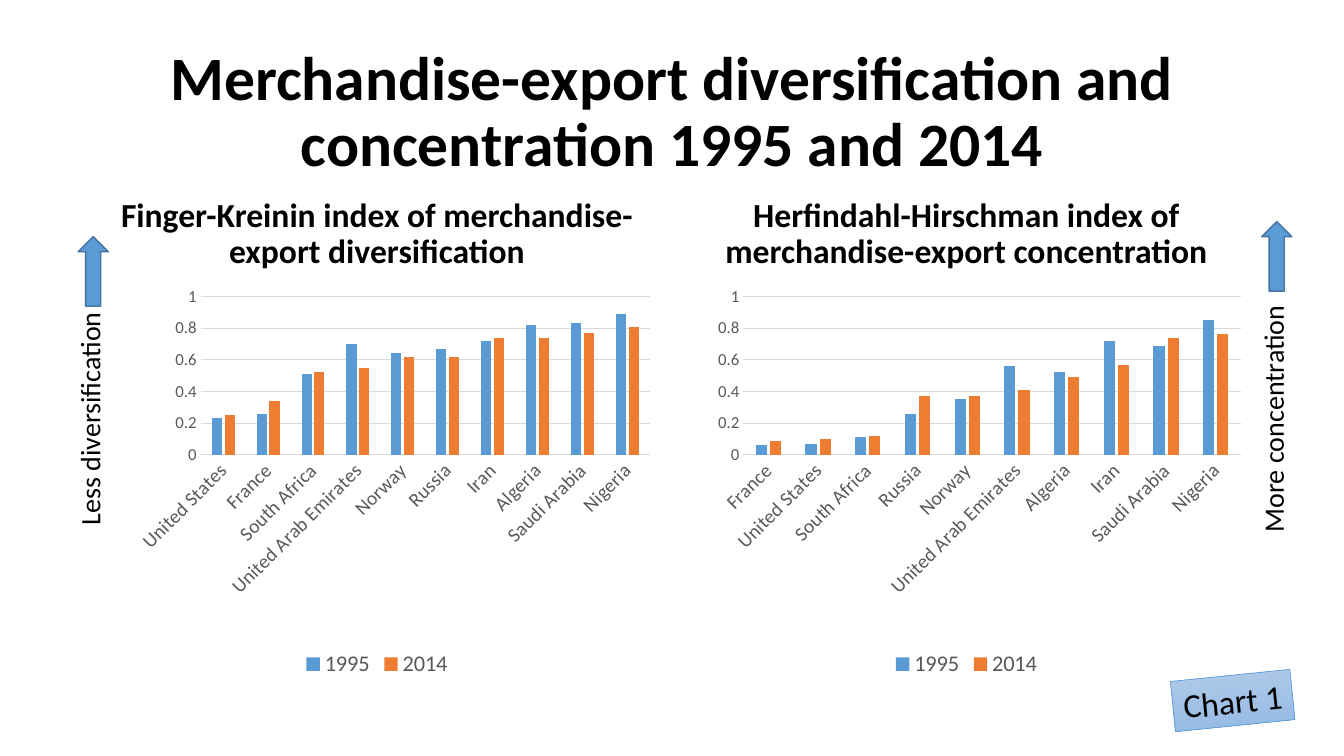
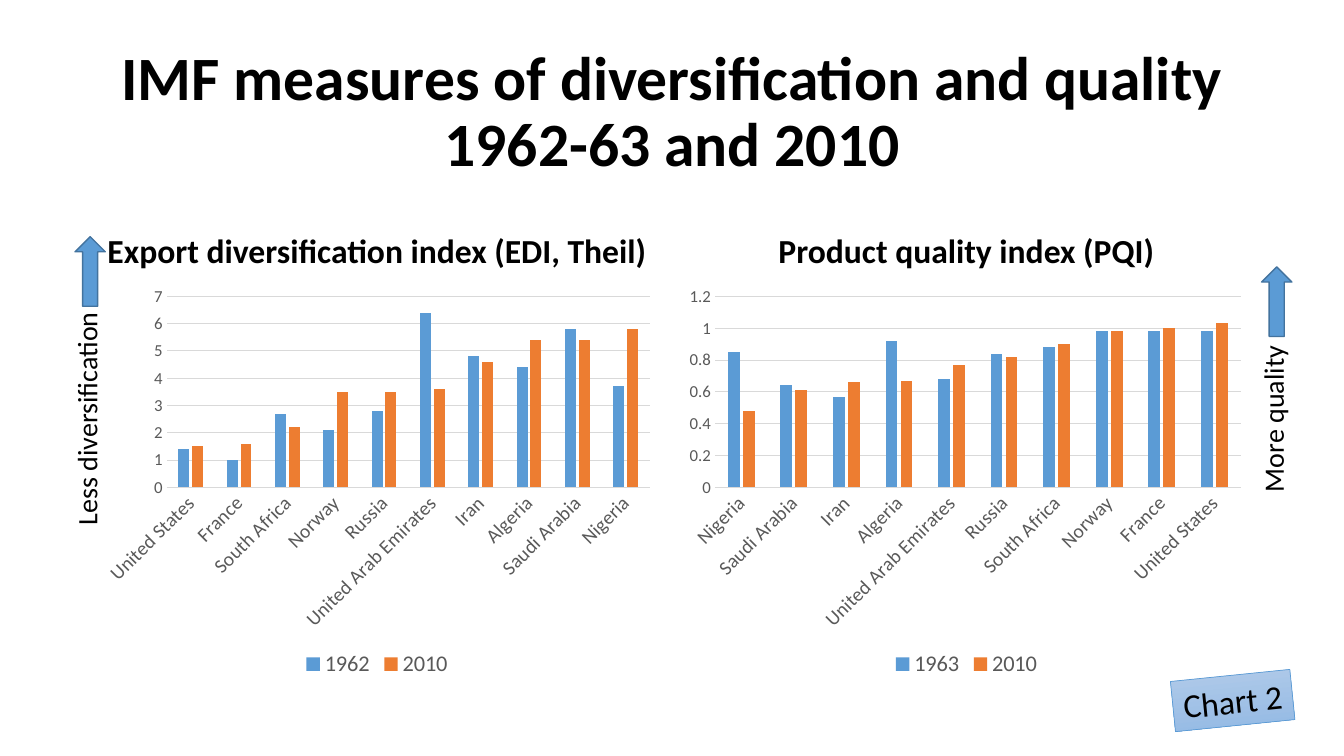
from lxml import etree
from pptx import Presentation
from pptx.chart.data import CategoryChartData
from pptx.dml.color import RGBColor
from pptx.enum.chart import XL_CHART_TYPE, XL_LEGEND_POSITION, XL_TICK_MARK
from pptx.enum.shapes import MSO_SHAPE
from pptx.enum.text import MSO_ANCHOR, MSO_AUTO_SIZE, PP_ALIGN
from pptx.oxml.ns import qn
from pptx.util import Inches, Pt

COLUMNS = XL_CHART_TYPE.COLUMN_CLUSTERED
LEGEND_BOTTOM = XL_LEGEND_POSITION.BOTTOM
NO_TICK = XL_TICK_MARK.NONE
UP_ARROW = MSO_SHAPE.UP_ARROW
RECTANGLE = MSO_SHAPE.RECTANGLE
MIDDLE, BOTTOM = MSO_ANCHOR.MIDDLE, MSO_ANCHOR.BOTTOM
NO_AUTOFIT = MSO_AUTO_SIZE.NONE
CENTER = PP_ALIGN.CENTER

FONT = "Calibri"
COLORS = {
    "text": "000000",
    "axis": "595959",
    "grid": "D9D9D9",
    "first": "5B9BD5",
    "second": "ED7D31",
    "arrow_line": "43739E",
    "tag_top": "B1CBE9",
    "tag_bottom": "93B9E4",
}

# All boxes are left, top, width, height in percent of the slide
TITLE = (6.9, 5.33, 86.27, 19.33)
TAG = (87.25, 89.33, 8.93, 6.67)
HALVES = ((6.9, 42.3), (50.64, 42.53))
HEADING_ROWS = (24.53, 12)
CHART_ROWS = (36.53, 53.73)
ARROW_SIZE = (2.25, 9.2)
LABEL_SIZE = (18.5, 5.87)
LABEL_MIDDLE = 55.4

# Plot edges as shares of the chart
PLOT_TOP, PLOT_RIGHT = 0.05, 0.98

SLIDES = [
    {
        "title": "Merchandise-export diversification and concentration 1995 and 2014",
        "tag": "Chart 1",
        "plot_height": 0.39,
        "panels": [
            {
                "heading": "Finger-Kreinin index of merchandise-export diversification",
                "label": "Less diversification",
                "arrow": (6.94, 40.5),
                "plot_left": 0.19,
                "scale": (1, 0.2),
                "countries": ["United States", "France", "South Africa",
                              "United Arab Emirates", "Norway", "Russia", "Iran",
                              "Algeria", "Saudi Arabia", "Nigeria"],
                "series": {
                    "1995": [0.23, 0.26, 0.51, 0.7, 0.64, 0.67, 0.72, 0.82, 0.83, 0.89],
                    "2014": [0.25, 0.34, 0.52, 0.55, 0.62, 0.62, 0.74, 0.74, 0.77, 0.81],
                },
            },
            {
                "heading": "Herfindahl-Hirschman index of merchandise-export concentration",
                "label": "More concentration",
                "arrow": (95, 38.5),
                "plot_left": 0.11,
                "scale": (1, 0.2),
                "countries": ["France", "United States", "South Africa", "Russia",
                              "Norway", "United Arab Emirates", "Algeria", "Iran",
                              "Saudi Arabia", "Nigeria"],
                "series": {
                    "1995": [0.06, 0.07, 0.11, 0.26, 0.35, 0.56, 0.52, 0.72, 0.69, 0.85],
                    "2014": [0.09, 0.1, 0.12, 0.37, 0.37, 0.41, 0.49, 0.57, 0.74, 0.76],
                },
            },
        ],
    },
    {
        "title": "IMF measures of diversification and quality 1962-63 and 2010",
        "tag": "Chart 2",
        "plot_height": 0.47,
        "panels": [
            {
                "heading": "Export diversification index (EDI, Theil)",
                "label": "Less diversification",
                "arrow": (6.71, 40.5),
                "plot_left": 0.13,
                "scale": (7, 1),
                "countries": ["United States", "France", "South Africa", "Norway",
                              "Russia", "United Arab Emirates", "Iran", "Algeria",
                              "Saudi Arabia", "Nigeria"],
                "series": {
                    "1962": [1.4, 1, 2.7, 2.1, 2.8, 6.4, 4.8, 4.4, 5.8, 3.7],
                    "2010": [1.5, 1.6, 2.2, 3.5, 3.5, 3.6, 4.6, 5.4, 5.4, 5.8],
                },
            },
            {
                "heading": "Product quality index (PQI)",
                "label": "More quality",
                "arrow": (95, 44.5),
                "plot_left": 0.06,
                "scale": (1.2, 0.2),
                "countries": ["Nigeria", "Saudi Arabia", "Iran", "Algeria",
                              "United Arab Emirates", "Russia", "South Africa",
                              "Norway", "France", "United States"],
                "series": {
                    "1963": [0.85, 0.64, 0.57, 0.92, 0.68, 0.84, 0.88, 0.98, 0.98, 0.98],
                    "2010": [0.48, 0.61, 0.66, 0.67, 0.77, 0.82, 0.9, 0.98, 1, 1.03],
                },
            },
        ],
    },
]


def color(name):
    return RGBColor.from_string(COLORS[name])


class Deck:
    """Holds the style and the current slide."""

    def __init__(self):
        self.presentation = Presentation()
        self.presentation.slide_width = Inches(13.33)
        self.presentation.slide_height = Inches(7.5)
        self.slide = None

    def box(self, left, top, width, height):
        across = self.presentation.slide_width / 100
        down = self.presentation.slide_height / 100
        return (int(left * across), int(top * down),
                int(width * across), int(height * down))

    def font(self, font, size, name="text", bold=False):
        font.name, font.size, font.bold = FONT, Pt(size), bold
        font.color.rgb = color(name)

    def set_text(self, shape, text, size, bold=False, anchor=MIDDLE, wrap=True):
        frame = shape.text_frame
        frame.text = text
        frame.auto_size = NO_AUTOFIT
        frame.word_wrap = wrap
        frame.vertical_anchor = anchor
        paragraph = frame.paragraphs[0]
        paragraph.alignment = CENTER
        paragraph.line_spacing = 0.9 if wrap else 1.0
        self.font(paragraph.runs[0].font, size, bold=bold)

    def add_slide(self, title):
        layout = self.presentation.slide_layouts.get_by_name("Title Only")
        self.slide = self.presentation.slides.add_slide(layout)
        shape = self.slide.shapes.title
        shape.left, shape.top, shape.width, shape.height = self.box(*TITLE)
        self.set_text(shape, title, 44, bold=True)

    def heading(self, left, width, text):
        top, height = HEADING_ROWS
        shape = self.slide.shapes.add_textbox(*self.box(left, top, width, height))
        self.set_text(shape, text, 24, bold=True, anchor=BOTTOM)

    def shape(self, kind, box, line, line_width):
        shape = self.slide.shapes.add_shape(kind, *self.box(*box))
        shape.shadow.inherit = False
        shape.line.color.rgb = color(line)
        shape.line.width = Pt(line_width)
        return shape

    def direction(self, center, arrow_bottom, text):
        """Upright label with an arrow above it."""
        width, height = LABEL_SIZE
        label = self.slide.shapes.add_textbox(*self.box(
            center - 0.3 - width / 2, LABEL_MIDDLE - height / 2, width, height))
        label.rotation = 270
        self.set_text(label, text, 20, wrap=False)
        width, height = ARROW_SIZE
        arrow = self.shape(UP_ARROW, (center - width / 2, arrow_bottom - height,
                                      width, height), "arrow_line", 1)
        arrow.fill.solid()
        arrow.fill.fore_color.rgb = color("first")

    def tag(self, text):
        shape = self.shape(RECTANGLE, TAG, "first", 0.5)
        shape.rotation = 354.2
        shape.fill.gradient()
        shape.fill.gradient_angle = 270
        for stop, name in zip(shape.fill.gradient_stops, ("tag_top", "tag_bottom")):
            stop.color.rgb = color(name)
        self.set_text(shape, text, 24, wrap=False)

    def chart(self, left, width, panel, plot_height):
        data = CategoryChartData()
        data.categories = panel["countries"]
        for name, values in panel["series"].items():
            data.add_series(name, values)
        top, height = CHART_ROWS
        chart = self.slide.shapes.add_chart(
            COLUMNS, *self.box(left, top, width, height), data).chart
        self.font(chart.font, 10)
        chart.has_title = False
        chart.has_legend = True
        chart.legend.position = LEGEND_BOTTOM
        chart.legend.include_in_layout = False
        self.font(chart.legend.font, 16, "axis")

        # Columns
        plot = chart.plots[0]
        plot.gap_width, plot.overlap = 219, -27
        plot.vary_by_categories = False
        for series, name in zip(plot.series, ("first", "second")):
            series.format.fill.solid()
            series.format.fill.fore_color.rgb = color(name)

        # Axes
        countries, values = chart.category_axis, chart.value_axis
        for axis, size in ((countries, 14), (values, 12)):
            axis.major_tick_mark = axis.minor_tick_mark = NO_TICK
            self.font(axis.tick_labels.font, size, "axis")
        values.minimum_scale = 0
        values.maximum_scale, values.major_unit = panel["scale"]
        values.tick_labels.number_format = "General"
        values.tick_labels.number_format_is_linked = False
        values.format.line.fill.background()
        for line in (countries.format.line, values.major_gridlines.format.line):
            line.color.rgb = color("grid")
            line.width = Pt(0.75)
        self.slant_labels(countries)
        self.place_plot(chart, panel["plot_left"], plot_height)

    def slant_labels(self, axis):
        body = axis._element.find(qn("c:txPr")).find(qn("a:bodyPr"))
        body.set("rot", "-2700000")
        body.set("vert", "horz")

    def place_plot(self, chart, left, height):
        area = chart._chartSpace.find(qn("c:chart")).find(qn("c:plotArea"))
        for layout in area.findall(qn("c:layout")):
            area.remove(layout)
        layout = etree.Element(qn("c:layout"))
        area.insert(0, layout)
        manual = etree.SubElement(layout, qn("c:manualLayout"))
        settings = {"layoutTarget": "inner", "xMode": "edge", "yMode": "edge",
                    "x": left, "y": PLOT_TOP,
                    "w": round(PLOT_RIGHT - left, 2), "h": height}
        for name, value in settings.items():
            etree.SubElement(manual, qn("c:" + name)).set("val", str(value))


def main():
    deck = Deck()
    for content in SLIDES:
        deck.add_slide(content["title"])
        for (left, width), panel in zip(HALVES, content["panels"]):
            deck.heading(left, width, panel["heading"])
            deck.chart(left, width, panel, content["plot_height"])
            deck.direction(*panel["arrow"], panel["label"])
        deck.tag(content["tag"])
    deck.presentation.save("out.pptx")


if __name__ == "__main__":
    main()
